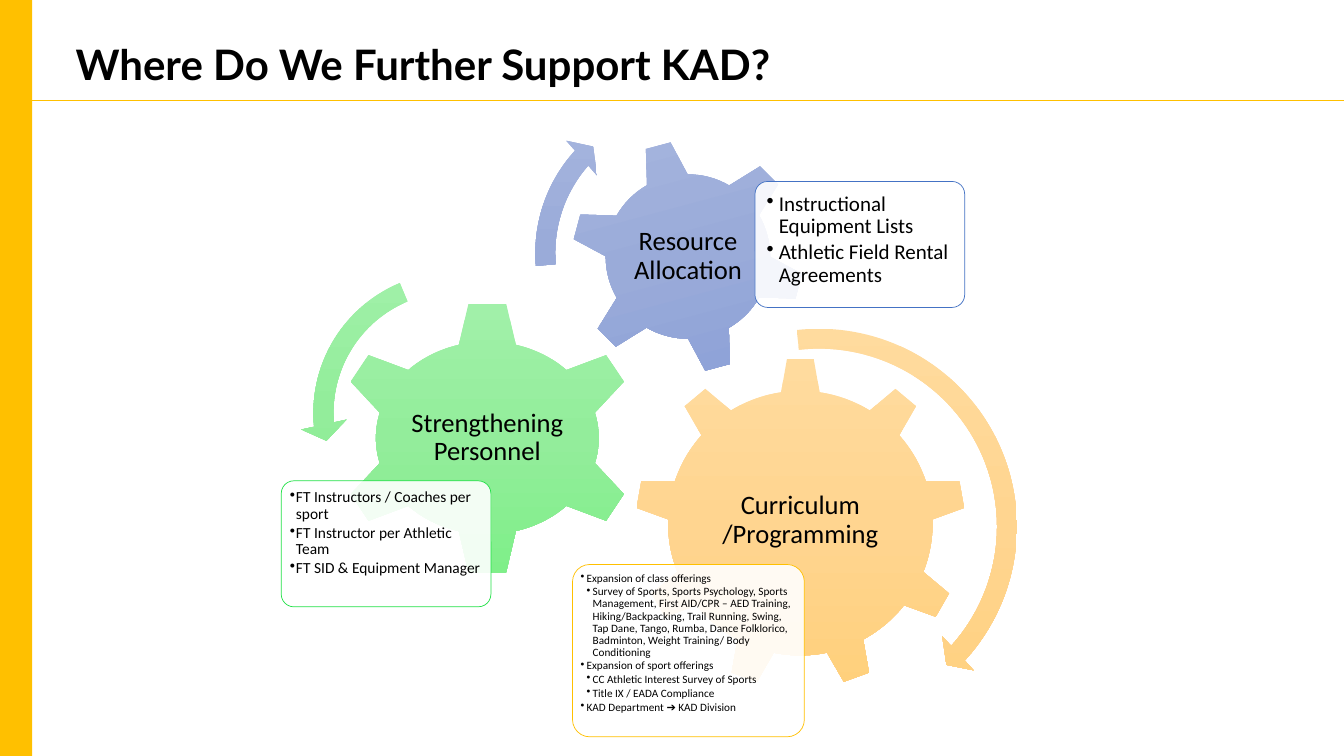
"""Build the gear diagram slide on where to further support KAD."""
import dataclasses

import lxml.etree
import pptx
import pptx.dml.color
import pptx.enum.shapes
import pptx.enum.text
import pptx.oxml.ns
import pptx.util

SHAPE = pptx.enum.shapes.MSO_SHAPE
ALIGN = pptx.enum.text.PP_ALIGN
ANCHOR = pptx.enum.text.MSO_ANCHOR
qn = pptx.oxml.ns.qn

TITLE = "Where Do We Further Support KAD?"
CELL = 0.1
COLUMNS, ROWS = 133.33, 75
RAIL, RULE_ROW = 3.2, 10

GEARS = [
    {
        "label": "Curriculum /Programming",
        "color": "orange",
        "gear": (SHAPE.GEAR_9, (63, 35.5, 32.8, 32.8), 0),
        "label_size": (19.6, 16.8),
        "label_lift": 0.3,
        "card": (56.8, 56, 23, 17.1),
        "text": {"size": 8, "inset": 0.3, "indent": 0.6},
        "points": [
            (1, "Expansion of class offerings"),
            (2, "Survey of Sports, Sports Psychology, Sports Management, "
                "First AID/CPR – AED Training, Hiking/Backpacking, Trail Running, "
                "Swing, Tap Dane, Tango, Rumba, Dance Folklorico, Badminton, "
                "Weight Training/ Body Conditioning"),
            (1, "Expansion of sport offerings"),
            (2, "CC Athletic Interest Survey of Sports"),
            (2, "Title IX / EADA Compliance"),
            (1, "KAD Department ➔ KAD Division"),
        ],
        "arrow": (SHAPE.CIRCULAR_ARROW, (60.3, 31.3, 41.9, 41.9),
                  (0.047, 2.99, 25.4, 158.12, 0.055)),
    },
    {
        "label": "Strengthening Personnel",
        "color": "green",
        "gear": (SHAPE.GEAR_6, (33.2, 29.8, 30.3, 27.3), 0),
        "label_size": (15.7, 13.5),
        "label_lift": 0,
        "card": (27.9, 47.7, 20.8, 12.5),
        "text": {"size": 11, "inset": 0.5, "indent": 0.6},
        "points": [
            (1, "FT Instructors / Coaches per sport"),
            (1, "FT Instructor per Athletic Team"),
            (1, "FT SID & Equipment Manager"),
        ],
        "arrow": (SHAPE.LEFT_CIRCULAR_ARROW, (29.8, 25.7, 30.5, 30.5),
                  (0.065, 4.3, 104.89, 148.38, 0.075)),
    },
    {
        "label": "Resource Allocation",
        "color": "blue",
        "gear": (SHAPE.GEAR_6, (56.6, 13.8, 23.3, 23.3), 345),
        "label_size": (13.1, 13.1),
        "label_lift": 0,
        "card": (74.9, 18, 20.8, 12.5),
        "text": {"size": 15, "inset": 0.8, "indent": 1.2},
        "points": [
            (1, "Instructional Equipment Lists"),
            (1, "Athletic Field Rental Agreements"),
        ],
        "arrow": (SHAPE.CIRCULAR_ARROW, (51.8, 8.7, 32.8, 32.8),
                  (0.06, 3.94, 133.14, 105.08, 0.07)),
    },
]


@dataclasses.dataclass(frozen=True)
class Theme:
    """Hold the colours, fonts and type sizes."""
    title_font: str = "Lato"
    body_font: str = "Calibri"
    title_size: int = 30
    label_size: int = 19
    ink: str = "000000"
    paper: str = "FFFFFF"
    accent: str = "FFC000"
    hairline: float = 0.5
    card_opacity: int = 90
    gradients = {"orange": ("FFDB9E", "FFD590", "FFD07C"),
                 "green": ("A1F0A9", "93ED9B", "7FEF89"),
                 "blue": ("A8B7DF", "9AABD9", "889ED7")}
    outlines = {"orange": "FFC000", "green": "23E148", "blue": "4472C4"}


THEME = Theme()


def cells(count):
    """Convert grid cells to a length."""
    return pptx.util.Inches(count * CELL)


def rgb(code):
    """Read a colour code."""
    return pptx.dml.color.RGBColor.from_string(code)


def add_part(page, kind, area):
    """Add a preset shape without shadow or outline."""
    part = page.shapes.add_shape(kind, *map(cells, area))
    part.shadow.inherit = False
    part.line.fill.background()
    return part


def paint_gradient(part, colors):
    """Fill a shape with evenly spaced colours from top to bottom."""
    part.fill.gradient()
    gradient = part.element.spPr.find(qn("a:gradFill"))
    for child in list(gradient):
        gradient.remove(child)
    stops = lxml.etree.SubElement(gradient, qn("a:gsLst"))
    for index, color in enumerate(colors):
        position = index * 100000 // (len(colors) - 1)
        stop = lxml.etree.SubElement(stops, qn("a:gs"), pos=str(position))
        lxml.etree.SubElement(stop, qn("a:srgbClr"), val=color)
    lxml.etree.SubElement(gradient, qn("a:lin"), ang="5400000", scaled="0")


def set_frame(box, inset, anchor):
    """Wrap the text of a box and set its margins."""
    frame = box.text_frame
    frame.word_wrap = True
    frame.auto_size = pptx.enum.text.MSO_AUTO_SIZE.NONE
    frame.vertical_anchor = anchor
    frame.margin_left = frame.margin_right = cells(inset)
    frame.margin_top = frame.margin_bottom = cells(inset)
    return frame


def style(para, font, size, align, bold=False):
    """Format one paragraph and its runs."""
    para.alignment = align
    para.line_spacing = 0.9
    for span in para.runs:
        span.font.name = font
        span.font.size = pptx.util.Pt(size)
        span.font.bold = bold
        span.font.color.rgb = rgb(THEME.ink)


def add_bullet(para, level, indent):
    """Give a paragraph a hanging bullet."""
    para.level = level
    props = para._p.get_or_add_pPr()
    props.set("marL", str(cells(indent * level)))
    props.set("indent", str(-cells(indent)))
    lxml.etree.SubElement(props, qn("a:buChar"), char="•")


def add_gear(page, item):
    """Draw a gear with its centred label."""
    kind, area, turn = item["gear"]
    gear = add_part(page, kind, area)
    gear.rotation = turn
    paint_gradient(gear, THEME.gradients[item["color"]])
    left, top, width, height = area
    wide, high = item["label_size"]
    place = (left + (width - wide) / 2,
             top + (height - high) / 2 - item["label_lift"], wide, high)
    label = page.shapes.add_textbox(*map(cells, place))
    frame = set_frame(label, 0.3, ANCHOR.MIDDLE)
    frame.text = item["label"]
    style(frame.paragraphs[0], THEME.body_font, THEME.label_size, ALIGN.CENTER)


def add_card(page, item):
    """Draw a translucent card with its bulleted points."""
    card = add_part(page, SHAPE.ROUNDED_RECTANGLE, item["card"])
    card.adjustments[0] = 0.1
    card.fill.solid()
    card.fill.fore_color.rgb = rgb(THEME.paper)
    color = card.element.spPr.find(qn("a:solidFill")).find(qn("a:srgbClr"))
    lxml.etree.SubElement(color, qn("a:alpha"), val=str(THEME.card_opacity * 1000))
    card.line.color.rgb = rgb(THEME.outlines[item["color"]])
    card.line.width = pptx.util.Pt(THEME.hairline)
    text = item["text"]
    frame = set_frame(card, text["inset"], ANCHOR.TOP)
    frame.text = "\n".join(point for level, point in item["points"])
    for para, (level, point) in zip(frame.paragraphs, item["points"]):
        style(para, THEME.body_font, text["size"], ALIGN.LEFT)
        para.space_after = pptx.util.Pt(text["size"] * 0.15)
        add_bullet(para, level, text["indent"])


def add_arrow(page, item):
    """Draw the curved arrow that turns around a gear."""
    kind, area, bends = item["arrow"]
    arrow = add_part(page, kind, area)
    for index, bend in enumerate(bends):
        arrow.adjustments[index] = bend
    paint_gradient(arrow, THEME.gradients[item["color"]])


def add_header(page):
    """Place the title, the side rail and the rule."""
    title = page.shapes.title
    title.left, title.top, title.width, title.height = map(cells, (6.5, 3.2, 118.9, 6.8))
    frame = set_frame(title, 0.5, ANCHOR.MIDDLE)
    frame.margin_left = frame.margin_right = cells(1)
    frame.text = TITLE
    style(frame.paragraphs[0], THEME.title_font, THEME.title_size, ALIGN.LEFT, True)
    rail = add_part(page, SHAPE.RECTANGLE, (0, 0, RAIL, ROWS))
    rail.fill.solid()
    rail.fill.fore_color.rgb = rgb(THEME.accent)
    rule = page.shapes.add_connector(
        pptx.enum.shapes.MSO_CONNECTOR.STRAIGHT,
        *map(cells, (RAIL, RULE_ROW, COLUMNS, RULE_ROW)))
    rule.line.color.rgb = rgb(THEME.accent)
    rule.line.width = pptx.util.Pt(THEME.hairline)
    lxml.etree.SubElement(rule.element.spPr, qn("a:effectLst"))


def main():
    """Assemble and save the deck."""
    deck = pptx.Presentation()
    deck.slide_width, deck.slide_height = cells(COLUMNS), cells(ROWS)
    page = deck.slides.add_slide(deck.slide_layouts.get_by_name("Title Only"))
    add_header(page)
    for item in GEARS:
        add_gear(page, item)
        add_card(page, item)
    for item in GEARS:
        add_arrow(page, item)
    deck.save("out.pptx")


if __name__ == "__main__":
    main()
